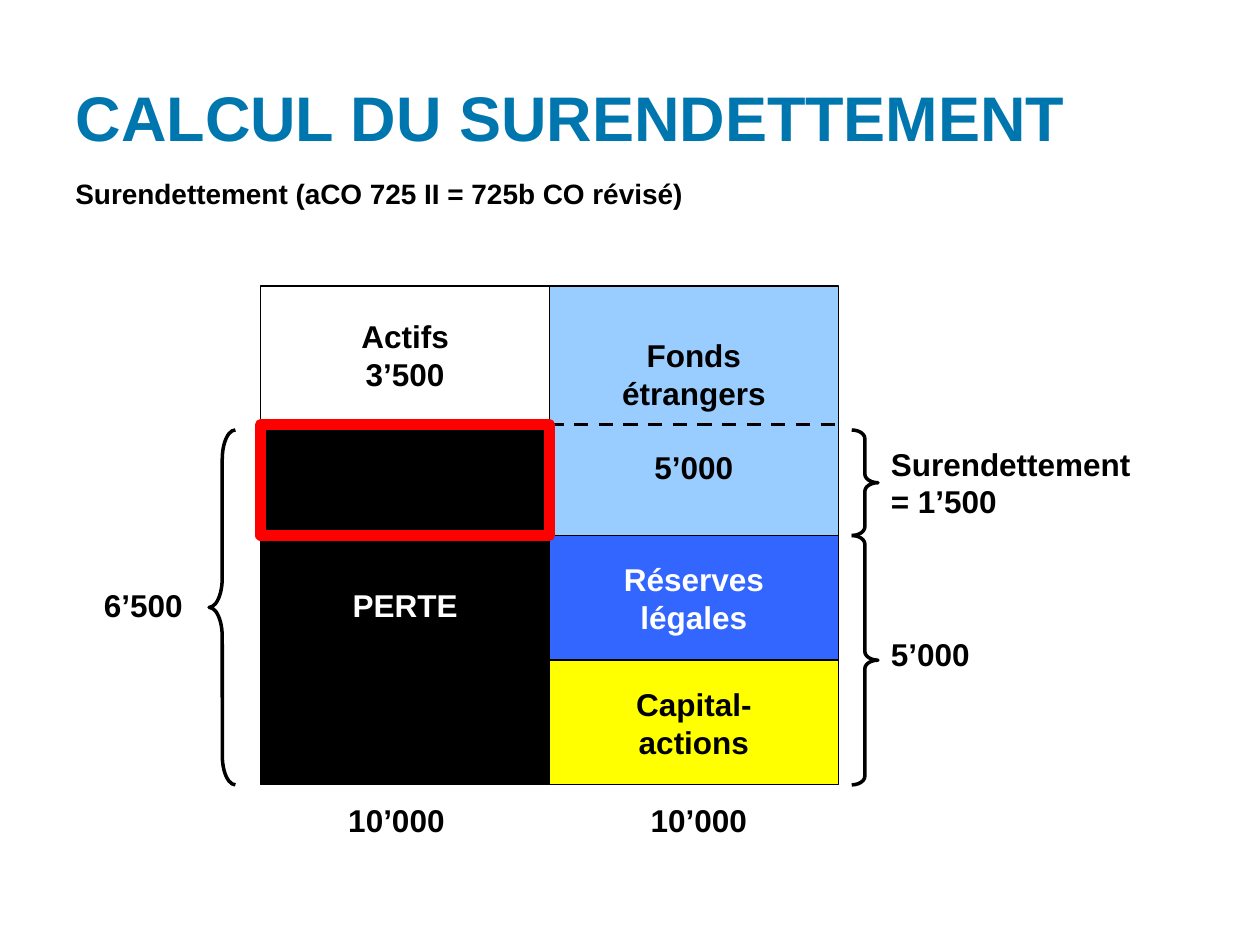
from pptx import Presentation
from pptx.dml.color import RGBColor
from pptx.enum import dml, shapes, text
from pptx.oxml.ns import qn
from pptx.util import Pt
from lxml import etree

COLORS = {name: RGBColor.from_string(value) for name, value in {
    "title": "0076AF", "black": "000000", "white": "FFFFFF", "red": "FF0000",
    "debt": "99CCFF", "reserves": "3366FF", "capital": "FFFF00",
}.items()}


def add_outlined(kind, left, top, width, height, line, weight, fill=None):
    """Add a preset shape with a solid outline and an optional fill."""
    shape = page.shapes.add_shape(kind, Pt(left), Pt(top), Pt(width), Pt(height))
    shape.shadow.inherit = False
    if fill:
        shape.fill.solid()
        shape.fill.fore_color.rgb = COLORS[fill]
    else:
        shape.fill.background()
    shape.line.color.rgb = COLORS[line]
    shape.line.width = Pt(weight)
    return shape


def write(shape, lines, align, size=18, color="black"):
    """Write bold Arial lines, one paragraph each."""
    frame = shape.text_frame
    frame.text = "\n".join(lines)
    for para in frame.paragraphs:
        para.alignment = align
        para.font.name = "Arial"
        para.font.size = Pt(size)
        para.font.bold = True
        para.font.color.rgb = COLORS[color]
    return frame


LEFT, CENTER, RIGHT = text.PP_ALIGN.LEFT, text.PP_ALIGN.CENTER, text.PP_ALIGN.RIGHT
RECTANGLE = shapes.MSO_SHAPE.RECTANGLE

deck = Presentation()
deck.slide_width, deck.slide_height = Pt(720), Pt(540)
page = deck.slides.add_slide(deck.slide_layouts[5])

# Title
title = page.shapes.title
title.left, title.top, title.width, title.height = Pt(36), Pt(21.6), Pt(648), Pt(90)
frame = write(title, ["CALCUL DU SURENDETTEMENT"], LEFT, 36, "title")
frame.vertical_anchor = text.MSO_ANCHOR.MIDDLE

# Subtitle
subtitle = page.shapes.add_textbox(Pt(36), Pt(97.2), Pt(635), Pt(22.3))
frame = write(subtitle, ["Surendettement (aCO 725 II = 725b CO révisé)"], LEFT, 16)
frame.word_wrap = True

# Balance sheet: two equal columns; equity is split into equal halves
COLUMN = 165
ASSETS = 149
LIABILITIES = ASSETS + COLUMN
TOP, LOSS, EQUITY, BOTTOM = 163.5, 242.5, 306, 448.5
HALF = (BOTTOM - EQUITY) / 2

blocks = [
    (ASSETS, TOP, LOSS, "white", "black", ["Actifs", "3’500"]),
    (ASSETS, LOSS, BOTTOM, "black", "white", ["PERTE"]),
    (LIABILITIES, TOP, EQUITY, "debt", "black", ["Fonds", "étrangers", "5’000"]),
    (LIABILITIES, EQUITY, EQUITY + HALF, "reserves", "white", ["Réserves", "légales"]),
    (LIABILITIES, EQUITY + HALF, BOTTOM, "capital", "black", ["Capital-", "actions"]),
]
for left, top, bottom, fill, color, lines in blocks:
    block = add_outlined(RECTANGLE, left, top, COLUMN, bottom - top, "black", 0.75, fill)
    frame = write(block, lines, CENTER, color=color)
    frame.vertical_anchor = text.MSO_ANCHOR.MIDDLE
    frame.word_wrap = False
    if len(lines) == 3:
        frame.paragraphs[2].space_before = Pt(21)

# Dashed limit of the covered debt
limit = page.shapes.add_connector(
    shapes.MSO_CONNECTOR.STRAIGHT,
    Pt(LIABILITIES), Pt(LOSS), Pt(LIABILITIES + COLUMN), Pt(LOSS))
limit.line.color.rgb = COLORS["black"]
limit.line.width = Pt(2)
limit.line.dash_style = dml.MSO_LINE.DASH
etree.SubElement(limit._element.spPr, qn("a:effectLst"))

# Red frame around the uncovered debt
add_outlined(RECTANGLE, ASSETS, LOSS, COLUMN, EQUITY - LOSS, "red", 6)

# Braces
BRACE_TOP = 245.7
braces = [
    (shapes.MSO_SHAPE.LEFT_BRACE, 119.5, BRACE_TOP, BOTTOM, 1.12),
    (shapes.MSO_SHAPE.RIGHT_BRACE, 486.7, BRACE_TOP, EQUITY, 0.33),
    (shapes.MSO_SHAPE.RIGHT_BRACE, 486.7, EQUITY, BOTTOM, 0.33),
]
for kind, left, top, bottom, curve in braces:
    brace = add_outlined(kind, left, top, 15, bottom - top, "black", 2)
    brace.adjustments[0] = curve
    brace.adjustments[1] = 0.5

# Amounts beside and below the balance sheet
labels = [
    (502, 250.5, 152.5, 51, LEFT, ["Surendettement", "= 1’500"]),
    (502, 359.3, 59.5, 29, LEFT, ["5’000"]),
    (52, 331.2, 59.5, 29, RIGHT, ["6’500"]),
    (191.5, 454.3, 70, 29, CENTER, ["10’000"]),
    (364.3, 454.3, 70, 29, CENTER, ["10’000"]),
]
for left, top, width, height, align, lines in labels:
    label = page.shapes.add_textbox(Pt(left), Pt(top), Pt(width), Pt(height))
    frame = write(label, lines, align)
    frame.word_wrap = False
    frame.auto_size = text.MSO_AUTO_SIZE.SHAPE_TO_FIT_TEXT

deck.save("out.pptx")
